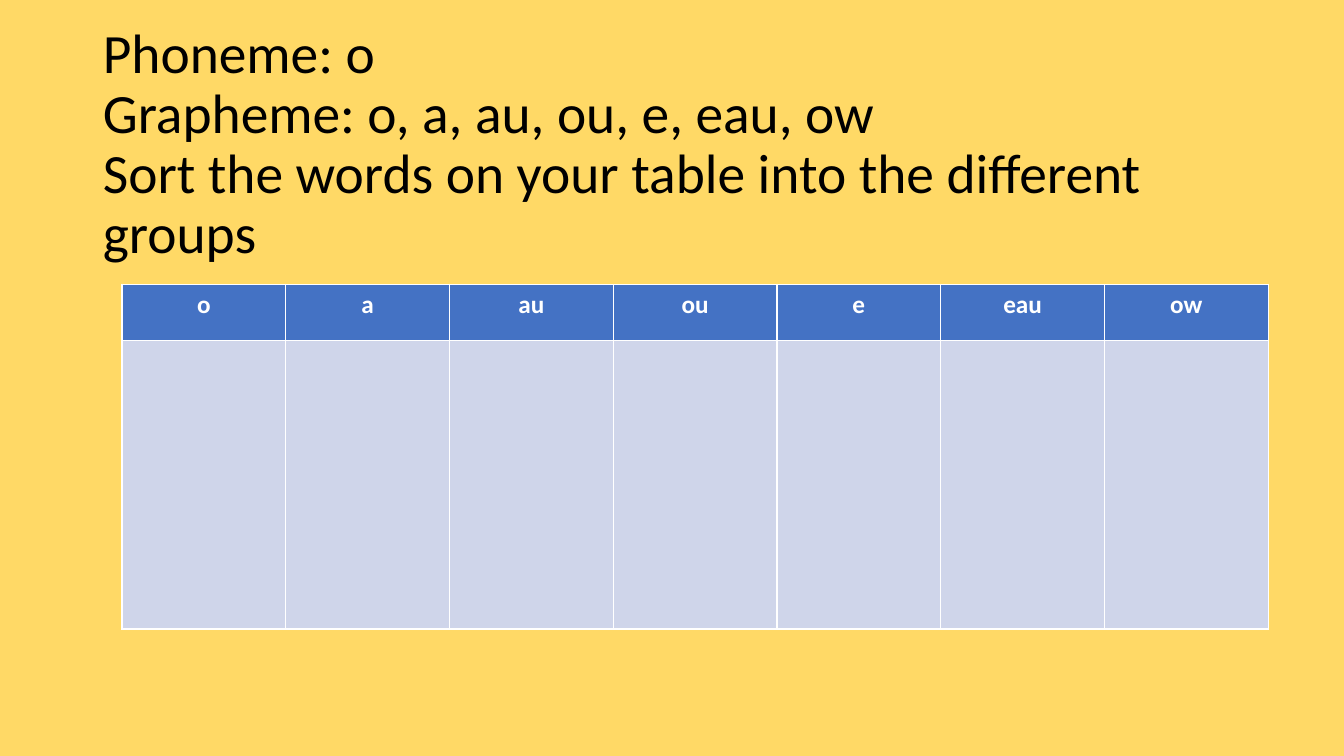
import pptx
import pptx.util
import pptx.dml.color
import pptx.enum.text

Inches = pptx.util.Inches
ALIGN = pptx.enum.text.PP_ALIGN
COLORS = {
    "page": "FFD966",
    "head": "4472C4",
    "body": "CFD5EA",
    "ink": "000000",
    "white": "FFFFFF",
}
SOUNDS = ["o", "a", "au", "ou", "e", "eau", "ow"]
TITLE = [
    "Phoneme: o",
    "Grapheme: " + ", ".join(SOUNDS),
    "Sort the words on your table into the different groups",
]


def paint(fill, color):
    fill.solid()
    fill.fore_color.rgb = pptx.dml.color.RGBColor.from_string(COLORS[color])


def style(para, size, color, bold, align):
    para.alignment = align
    for run in para.runs:
        run.font.name = "Calibri"
        run.font.size = pptx.util.Pt(size)
        run.font.bold = bold
        paint(run.font.fill, color)


def add_title(slide, lines):
    title = slide.shapes.title
    title.left, title.top = Inches(0.92), Inches(0.72)
    title.width, title.height = Inches(11.5), Inches(1.45)
    frame = title.text_frame
    frame.word_wrap = True
    frame.auto_size = pptx.enum.text.MSO_AUTO_SIZE.NONE
    frame.vertical_anchor = pptx.enum.text.MSO_ANCHOR.MIDDLE
    para = frame.paragraphs[0]
    para.text = "\v".join(lines)
    para.line_spacing = 0.9
    style(para, 39.6, "ink", False, ALIGN.LEFT)


def add_grid(slide, heads):
    frame = slide.shapes.add_table(
        2, len(heads), Inches(1.21), Inches(2.82), Inches(11.37), Inches(3.42)
    )
    table = frame.table
    table.rows[0].height = Inches(0.56)
    table.rows[1].height = Inches(2.86)
    for col, head in enumerate(heads):
        top, low = table.cell(0, col), table.cell(1, col)
        paint(top.fill, "head")
        paint(low.fill, "body")
        para = top.text_frame.paragraphs[0]
        para.text = head
        style(para, 18, "white", True, ALIGN.CENTER)


def main():
    deck = pptx.Presentation()
    deck.slide_width, deck.slide_height = Inches(13.33), Inches(7.5)
    slide = deck.slides.add_slide(deck.slide_layouts.get_by_name("Title Only"))
    paint(slide.background.fill, "page")
    add_title(slide, TITLE)
    add_grid(slide, SOUNDS)
    deck.save("out.pptx")


if __name__ == "__main__":
    main()
